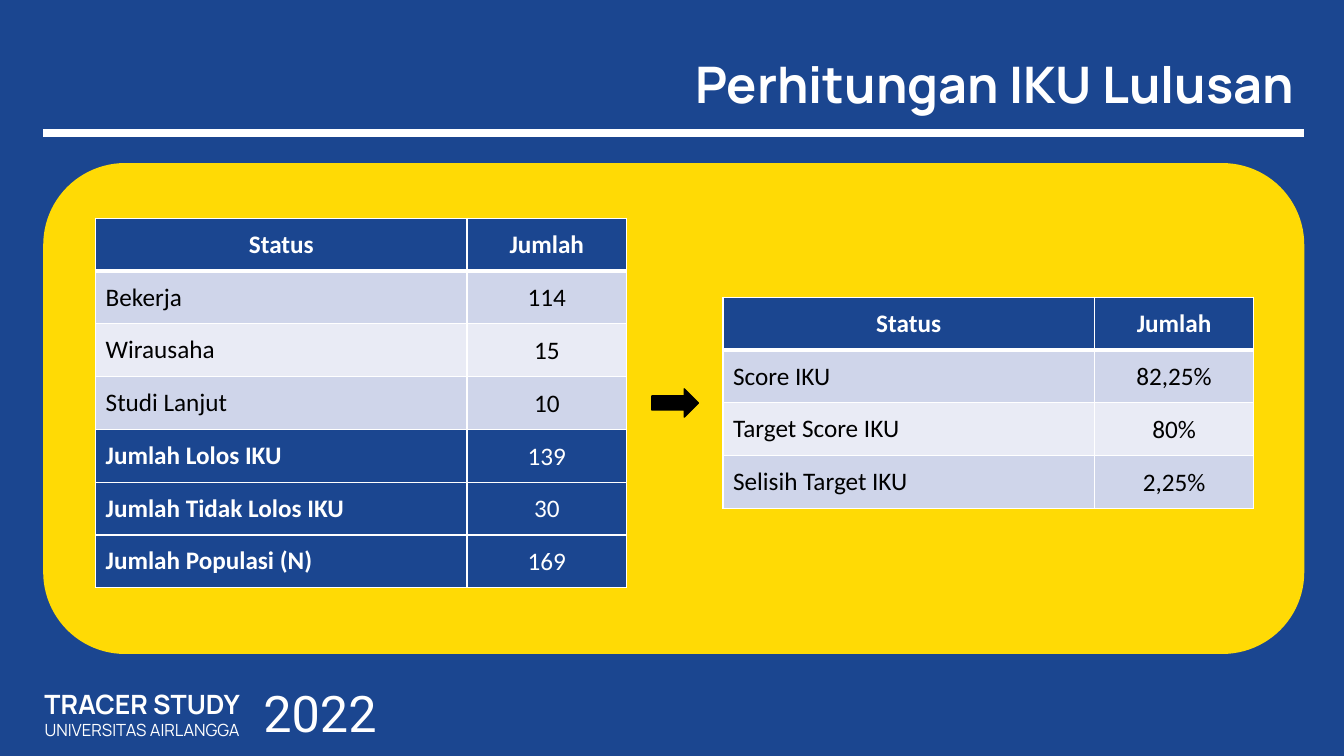
from lxml.etree import SubElement
from pptx import Presentation
from pptx.dml.color import RGBColor
from pptx.enum.shapes import MSO_CONNECTOR, MSO_SHAPE
from pptx.enum.text import MSO_ANCHOR, PP_ALIGN
from pptx.oxml import parse_xml
from pptx.oxml.ns import nsdecls, qn
from pptx.util import Cm, Pt

BLUE = RGBColor(0x1B, 0x46, 0x90)
YELLOW = RGBColor(0xFF, 0xDA, 0x05)
WHITE = RGBColor(0xFF, 0xFF, 0xFF)
BLACK = RGBColor(0, 0, 0)
BANDS = [RGBColor(0xCF, 0xD5, 0xEA), RGBColor(0xE9, 0xEB, 0xF5)]

ROW_HEIGHT = 1.33
STATUS_WIDTH, JUMLAH_WIDTH = 9.36, 4.02


def add_run(paragraph, text, font, size, color, bold=False):
    run = paragraph.add_run()
    run.text = text
    run.font.name = font
    run.font.size = Pt(size)
    run.font.bold = bold
    run.font.color.rgb = color


def set_borders(cell, top, bottom):
    """Give the cell white borders; top and bottom are widths in points."""
    sides = [("lnL", 1), ("lnR", 1), ("lnT", top), ("lnB", bottom)]
    for position, (side, width) in enumerate(sides):
        border = parse_xml(
            f'<a:{side} {nsdecls("a")} w="{Pt(width)}"><a:solidFill>'
            f'<a:srgbClr val="{WHITE}"/></a:solidFill></a:{side}>')
        cell._tc.get_or_add_tcPr().insert(position, border)


prs = Presentation()
prs.slide_width, prs.slide_height = Cm(33.87), Cm(19.05)
slide = prs.slides.add_slide(prs.slide_layouts[6])
slide.background.fill.solid()
slide.background.fill.fore_color.rgb = BLUE

# Panel and rule
panel = slide.shapes.add_shape(
    MSO_SHAPE.ROUNDED_RECTANGLE, Cm(1.09), Cm(4.11), Cm(31.78), Cm(12.37))
panel.shadow.inherit = False
panel.fill.solid()
panel.fill.fore_color.rgb = YELLOW
panel.line.fill.background()

rule = slide.shapes.add_connector(
    MSO_CONNECTOR.STRAIGHT, Cm(1.09), Cm(3.35), Cm(32.87), Cm(3.35))
rule.line.color.rgb = WHITE
rule.line.width = Pt(6)
SubElement(rule._element.spPr, qn("a:effectLst"))

# Title and footer: place, alignment, wrapping, lines of (text, font, size, bold)
texts = [
    ((1.09, 1.04, 31.78, 2.31), PP_ALIGN.RIGHT, True,
     [("Perhitungan IKU Lulusan", "Manrope", 36, True)]),
    ((0.79, 17.2, 5.59, 1.57), PP_ALIGN.CENTER, False,
     [("TRACER STUDY", "Manrope", 19, True),
      ("UNIVERSITAS AIRLANGGA", "Manrope", 12, False)]),
    ((6.07, 17.07, 3.99, 1.8), PP_ALIGN.CENTER, False,
     [("2022", "Roboto", 36, False)]),
]
for place, alignment, wraps, lines in texts:
    frame = slide.shapes.add_textbox(*map(Cm, place)).text_frame
    frame.word_wrap = wraps
    frame.vertical_anchor = MSO_ANCHOR.MIDDLE if wraps else MSO_ANCHOR.TOP
    for number, (text, font, size, bold) in enumerate(lines):
        paragraph = frame.add_paragraph() if number else frame.paragraphs[0]
        paragraph.alignment = alignment
        if wraps:
            paragraph.line_spacing = 0.9
        add_run(paragraph, text, font, size, WHITE, bold)

# Tables: left, top, rows below the header, number of total rows at the end
header = ("Status", "Jumlah")
graduate_counts = [
    ("Bekerja", "114"),
    ("Wirausaha", "15"),
    ("Studi Lanjut", "10"),
    ("Jumlah Lolos IKU", "139"),
    ("Jumlah Tidak Lolos IKU", "30"),
    ("Jumlah Populasi (N)", "169"),
]
iku_scores = [
    ("Score IKU", "82,25%"),
    ("Target Score IKU", "80%"),
    ("Selisih Target IKU", "2,25%"),
]
for left, top, body, totals in [(2.41, 5.5, graduate_counts, 3),
                                (18.22, 7.49, iku_scores, 0)]:
    rows = [header] + body
    table = slide.shapes.add_table(
        len(rows), 2, Cm(left), Cm(top), Cm(STATUS_WIDTH + JUMLAH_WIDTH),
        Cm(ROW_HEIGHT * len(rows))).table
    table.columns[0].width = Cm(STATUS_WIDTH)
    table.columns[1].width = Cm(JUMLAH_WIDTH)
    for r, row in enumerate(rows):
        table.rows[r].height = Cm(ROW_HEIGHT)
        is_header = r == 0
        is_dark = is_header or r >= len(rows) - totals
        for c, text in enumerate(row):
            cell = table.cell(r, c)
            cell.fill.solid()
            cell.fill.fore_color.rgb = BLUE if is_dark else BANDS[(r - 1) % 2]
            set_borders(cell, 3 if r == 1 else 1, 3 if is_header else 1)
            cell.vertical_anchor = MSO_ANCHOR.MIDDLE
            if c == 1 and not is_header:
                cell.margin_left = cell.margin_right = cell.margin_top = Cm(0.03)
                cell.margin_bottom = 0
            paragraph = cell.text_frame.paragraphs[0]
            centred = is_header or c == 1
            paragraph.alignment = PP_ALIGN.CENTER if centred else PP_ALIGN.LEFT
            add_run(paragraph, text, "Calibri", 18, WHITE if is_dark else BLACK,
                    is_header or (is_dark and c == 0))

# Arrow from the counts to the scores
arrow = slide.shapes.add_shape(
    MSO_SHAPE.RIGHT_ARROW, Cm(16.43), Cm(9.8), Cm(1.17), Cm(0.71))
arrow.shadow.inherit = False
arrow.fill.solid()
arrow.fill.fore_color.rgb = BLACK
arrow.line.color.rgb = BLACK
arrow.line.width = Pt(1)

prs.save("out.pptx")
